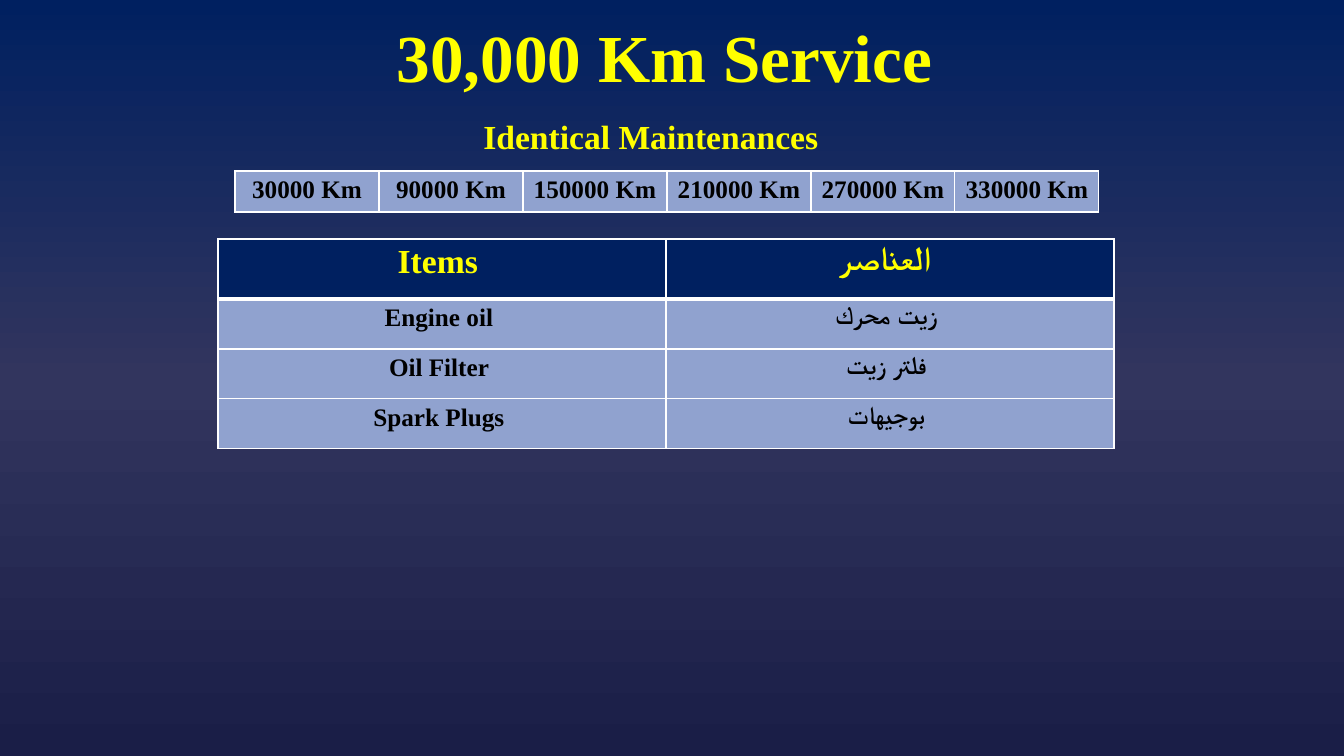
from copy import deepcopy

from pptx import Presentation
from pptx import util as u
from pptx.dml.color import RGBColor
from pptx.enum import text
from pptx.oxml import parse_xml
from pptx.oxml.ns import nsdecls

NAVY = RGBColor(0x00, 0x20, 0x60)
SLATE = RGBColor(0x32, 0x35, 0x5E)
INDIGO = RGBColor(0x1A, 0x1E, 0x47)
YELLOW = RGBColor(0xFF, 0xFF, 0x00)
PERIWINKLE = RGBColor(0x90, 0xA2, 0xCF)
BLACK = RGBColor(0x00, 0x00, 0x00)
WHITE = RGBColor(0xFF, 0xFF, 0xFF)

INTERVALS = ["30000 Km", "90000 Km", "150000 Km", "210000 Km ", "270000 Km ", "330000 Km"]
ITEMS = [
    ("Items ", "العناصر "),
    ("Engine oil ", "زيت محرك "),
    ("Oil Filter ", "فلتر زيت "),
    ("Spark Plugs ", "بوجيهات "),
]


def px(n):
    return u.Emu(round(n * 914400 / 100.8))


class ServiceSlide:
    font = "Times New Roman"

    def __init__(self, prs):
        self.s = prs.slides.add_slide(prs.slide_layouts[6])

    def background(self, *colors):
        """Fill the background with evenly spaced colours, top to bottom."""
        fill = self.s.background.fill
        fill.gradient()
        fill.gradient_angle = 270
        first = fill.gradient_stops[0]._gs
        for _ in colors[2:]:
            first.addnext(deepcopy(first))
        for i, (stop, color) in enumerate(zip(fill.gradient_stops, colors)):
            stop.position = i / (len(colors) - 1)
            stop.color.rgb = color

    def set_text(self, tf, words, size, color):
        p = tf.paragraphs[0]
        p.text = words
        p.alignment = text.PP_ALIGN.CENTER
        font = p.runs[0].font
        font.name, font.size, font.bold = self.font, u.Pt(size), True
        font.color.rgb = color
        return p

    def label(self, x, y, w, h, words, size):
        tf = self.s.shapes.add_textbox(px(x), px(y), px(w), px(h)).text_frame
        tf.word_wrap = True
        tf.vertical_anchor = text.MSO_ANCHOR.MIDDLE
        return self.set_text(tf, words, size, YELLOW)

    def border(self, cell, top, bottom):
        """Draw white cell edges; top and bottom widths are in points."""
        tc_pr = cell._tc.get_or_add_tcPr()
        for i, (side, width) in enumerate(zip("LRTB", (1, 1, top, bottom))):
            tc_pr.insert(i, parse_xml(
                f'<a:ln{side} {nsdecls("a")} w="{u.Pt(width)}"><a:solidFill>'
                f'<a:srgbClr val="{WHITE}"/></a:solidFill></a:ln{side}>'))

    def table(self, x, y, col_w, heights, rows, header=False):
        n_cols = len(rows[0])
        tbl = self.s.shapes.add_table(
            len(rows), n_cols, px(x), px(y), px(col_w * n_cols), px(sum(heights))).table
        tbl.first_row, tbl.horz_banding = header, False
        for col in tbl.columns:
            col.width = px(col_w)
        for i, (height, row) in enumerate(zip(heights, rows)):
            tbl.rows[i].height = px(height)
            is_head = header and i == 0
            for j, words in enumerate(row):
                cell = tbl.cell(i, j)
                cell.fill.solid()
                cell.fill.fore_color.rgb = NAVY if is_head else PERIWINKLE
                self.border(cell, 3 if header and i == 1 else 1, 3 if is_head else 1)
                size, color = (24, YELLOW) if is_head else (18, BLACK)
                self.set_text(cell.text_frame, words, size, color)


def main():
    prs = Presentation()
    prs.slide_width, prs.slide_height = px(1344), px(756)
    slide = ServiceSlide(prs)
    slide.background(NAVY, SLATE, INDIGO)
    title = slide.label(85, 10, 1159, 101, "30,000 Km Service", 48)
    title.line_spacing = 0.9
    slide.table(235, 171, 144, [41], [INTERVALS])
    slide.label(380, 111, 550, 51, "Identical Maintenances ", 24)
    slide.table(218, 239, 448, [60, 50, 50, 50], ITEMS, header=True)
    prs.save("out.pptx")


if __name__ == "__main__":
    main()
